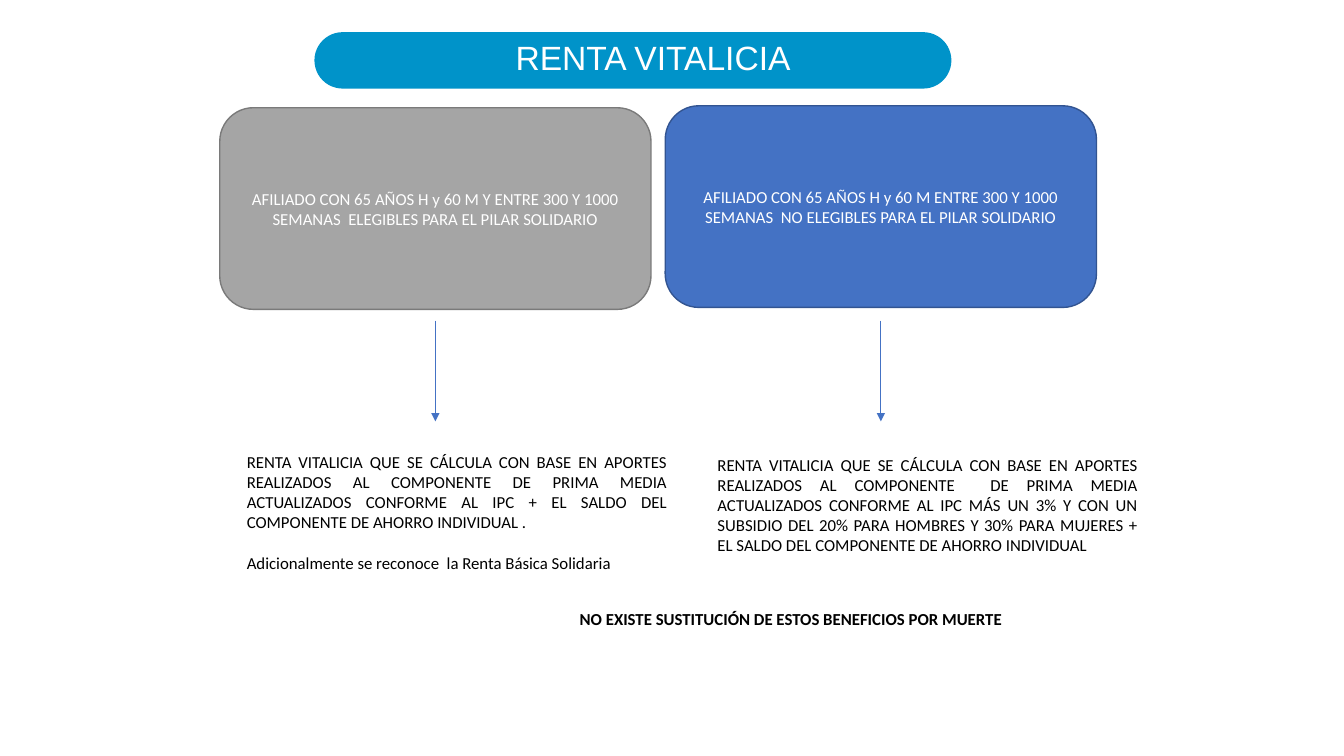
from pptx import Presentation
from pptx.dml.color import RGBColor
from pptx.enum.shapes import MSO_CONNECTOR, MSO_SHAPE
from pptx.enum.text import MSO_ANCHOR, PP_ALIGN
from pptx.oxml.ns import qn
from pptx.util import Pt
from lxml.etree import SubElement

WHITE = RGBColor(0xFF, 0xFF, 0xFF)
BLACK = RGBColor(0, 0, 0)
GRAY = RGBColor(0xA5, 0xA5, 0xA5)
GRAY_EDGE = RGBColor(0x7A, 0x7A, 0x7A)
BLUE = RGBColor(0x44, 0x72, 0xC4)
BLUE_EDGE = RGBColor(0x32, 0x54, 0x91)
CYAN = RGBColor(0x00, 0x93, 0xC9)

prs = Presentation()
prs.slide_width, prs.slide_height = Pt(960), Pt(540)
s = prs.slides.add_slide(prs.slide_layouts[6])


def add_round_rect(x, y, w, h, fill):
    sp = s.shapes.add_shape(MSO_SHAPE.ROUNDED_RECTANGLE, Pt(x), Pt(y), Pt(w), Pt(h))
    sp.shadow.inherit = False
    sp.fill.solid()
    sp.fill.fore_color.rgb = fill
    return sp


def write(sp, texts, color, align, size=12, font="Calibri", bold=False):
    tf = sp.text_frame
    tf.word_wrap = True
    for i, text in enumerate(texts):
        p = tf.add_paragraph() if i else tf.paragraphs[0]
        p.alignment = align
        if i:
            p.space_before = Pt(14.65)
        r = p.add_run()
        r.text = text
        r.font.name, r.font.size, r.font.bold = font, Pt(size), bold
        r.font.color.rgb = color


# Affiliate groups, each with an arrow down to its benefit
groups = [
    (157, 77, GRAY, GRAY_EDGE,
     "AFILIADO CON 65 AÑOS H y 60 M Y ENTRE 300 Y 1000 SEMANAS  ELEGIBLES PARA EL PILAR SOLIDARIO"),
    (475.2, 75.6, BLUE, BLUE_EDGE,
     "AFILIADO CON 65 AÑOS H y 60 M ENTRE 300 Y 1000 SEMANAS  NO ELEGIBLES PARA EL PILAR SOLIDARIO"),
]
BOX_W, BOX_H = 308, 144
for x, y, fill, edge, text in groups:
    sp = add_round_rect(x, y, BOX_W, BOX_H, fill)
    sp.line.color.rgb = edge
    sp.line.width = Pt(1)
    sp.text_frame.vertical_anchor = MSO_ANCHOR.MIDDLE
    write(sp, [text], WHITE, PP_ALIGN.CENTER)

    mid = Pt(x + BOX_W / 2)
    arrow = s.shapes.add_connector(MSO_CONNECTOR.STRAIGHT, mid, Pt(229), mid, Pt(301))
    arrow.line.color.rgb = BLUE
    arrow.line.width = Pt(0.5)
    SubElement(arrow.line._get_or_add_ln(), qn("a:tailEnd"), type="triangle")
    SubElement(arrow._element.spPr, qn("a:effectLst"))

# Benefits and closing note
notes = [
    (169.2, 319, 314.6, 94.3, False, [
        "RENTA VITALICIA QUE SE CÁLCULA CON BASE EN APORTES REALIZADOS AL COMPONENTE DE PRIMA MEDIA "
        "ACTUALIZADOS CONFORME AL IPC + EL SALDO DEL COMPONENTE DE AHORRO INDIVIDUAL .",
        "Adicionalmente se reconoce  la Renta Básica Solidaria"]),
    (505.4, 321.1, 314.6, 80, False, [
        "RENTA VITALICIA QUE SE CÁLCULA CON BASE EN APORTES REALIZADOS AL COMPONENTE  DE PRIMA MEDIA "
        "ACTUALIZADOS CONFORME AL IPC MÁS UN 3% Y CON UN SUBSIDIO DEL 20% PARA HOMBRES Y 30% PARA "
        "MUJERES + EL SALDO DEL COMPONENTE DE AHORRO INDIVIDUAL"]),
    (407, 431.3, 378.7, 21.6, True, ["NO EXISTE SUSTITUCIÓN DE ESTOS BENEFICIOS POR MUERTE"]),
]
for x, y, w, h, bold, texts in notes:
    sp = s.shapes.add_textbox(Pt(x), Pt(y), Pt(w), Pt(h))
    write(sp, texts, BLACK, PP_ALIGN.JUSTIFY, bold=bold)

# Title pill and its text
pill = add_round_rect(224.6, 23, 455, 40.3, CYAN)
pill.adjustments[0] = 0.5
pill.line.fill.background()
title = s.shapes.add_textbox(Pt(239), Pt(23), Pt(455), Pt(36))
write(title, ["RENTA VITALICIA"], WHITE, PP_ALIGN.CENTER, size=24, font="Arial")

prs.save("out.pptx")
